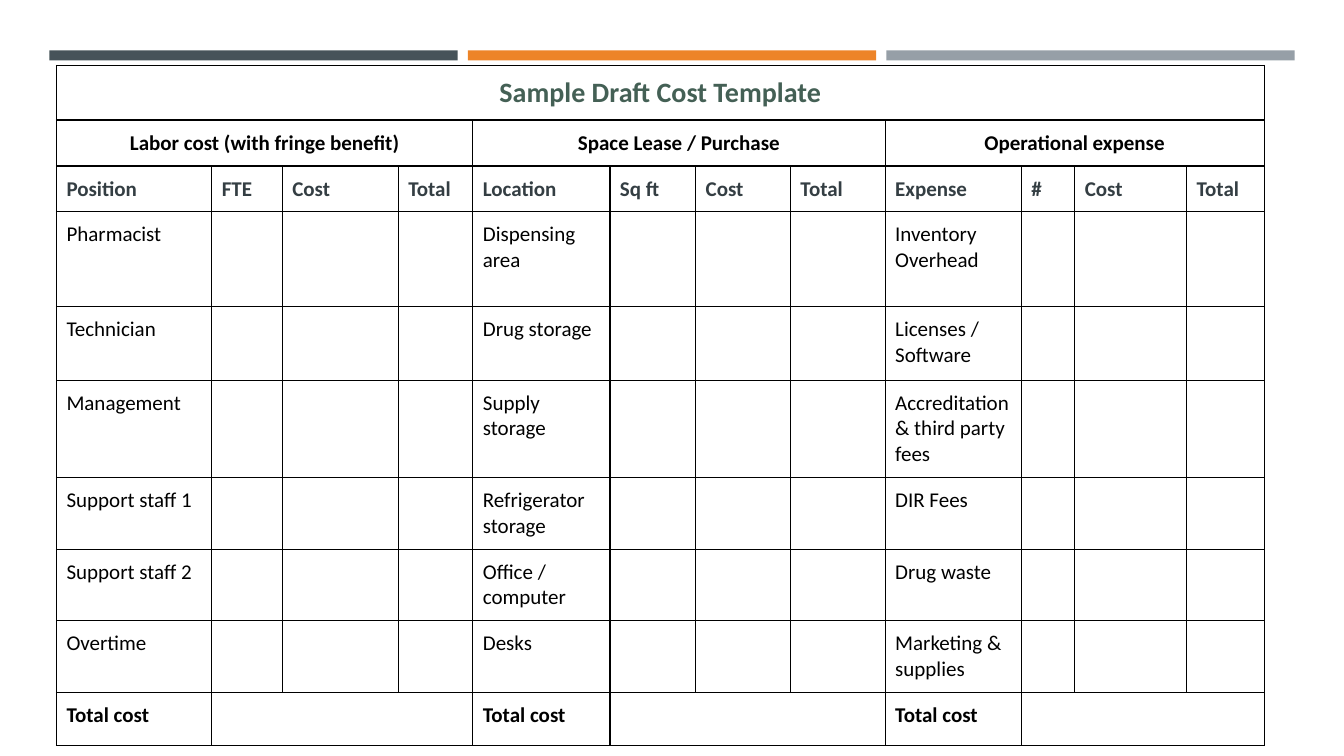
"""Build the sample draft cost template slide."""
from lxml.etree import SubElement
from pptx import Presentation
from pptx.dml.color import RGBColor
from pptx.enum.shapes import MSO_SHAPE
from pptx.enum.text import PP_ALIGN
from pptx.oxml.ns import qn
from pptx.util import Inches, Pt

SLATE = RGBColor(0x46, 0x53, 0x59)
ORANGE = RGBColor(0xED, 0x84, 0x28)
GRAY = RGBColor(0x96, 0x9F, 0xA7)
GREEN = RGBColor(0x44, 0x60, 0x55)
CHARCOAL = RGBColor(0x34, 0x3E, 0x43)
BLACK = RGBColor(0, 0, 0)

TITLE = "Sample Draft Cost Template"
TOTAL_LABEL = "Total cost"
SECTIONS = [
    ("Labor cost (with fringe benefit)", ["Position", "FTE", "Cost", "Total"],
     ["Pharmacist", "Technician", "Management", "Support staff 1",
      "Support staff 2", "Overtime"]),
    ("Space Lease / Purchase", ["Location", "Sq ft", "Cost", "Total"],
     ["Dispensing area", "Drug storage", "Supply storage",
      "Refrigerator storage", "Office / computer", "Desks"]),
    ("Operational expense", ["Expense", "#", "Cost", "Total"],
     ["Inventory Overhead", "Licenses / Software",
      "Accreditation & third party fees", "DIR Fees", "Drug waste",
      "Marketing & supplies"]),
]
COLUMN_WIDTHS = [1.54, 0.7, 1.15, 0.74, 1.36, 0.85, 0.94, 0.94,
                 1.35, 0.53, 1.11, 0.77]
ROW_HEIGHTS = [0.49, 0.41, 0.44, 0.94, 0.73, 0.86, 0.69, 0.69, 0.69, 0.53]
LAST_ROW = len(ROW_HEIGHTS) - 1
SECTION_SPAN = 4
BAR_COLORS = [SLATE, ORANGE, GRAY]
BAR_LEFT, BAR_PITCH, BAR_WIDTH = 0.49, 4.15, 4.05


def add_bars(slide):
    for index, color in enumerate(BAR_COLORS):
        bar = slide.shapes.add_shape(
            MSO_SHAPE.RECTANGLE, Inches(BAR_LEFT + index * BAR_PITCH),
            Inches(0.5), Inches(BAR_WIDTH), Inches(0.1))
        bar.shadow.inherit = False
        bar.fill.solid()
        bar.fill.fore_color.rgb = color
        bar.line.fill.background()


def style_cell(cell):
    cell.margin_left = cell.margin_right = Inches(0.1)
    cell.margin_top = cell.margin_bottom = Inches(0.1)
    properties = cell._tc.get_or_add_tcPr()
    for side in ("a:lnL", "a:lnR", "a:lnT", "a:lnB"):
        border = SubElement(properties, qn(side), w=str(Pt(1)))
        ink = SubElement(border, qn("a:solidFill"))
        SubElement(ink, qn("a:srgbClr"), val=str(BLACK))
    cell.fill.background()


def write(cell, text, color=BLACK, bold=True, size=15, align=PP_ALIGN.LEFT):
    paragraph = cell.text_frame.paragraphs[0]
    paragraph.text = text
    paragraph.alignment = align
    paragraph.font.name = "Calibri"
    paragraph.font.size = Pt(size)
    paragraph.font.bold = bold
    paragraph.font.color.rgb = color


def add_cost_table(slide):
    costs = slide.shapes.add_table(
        len(ROW_HEIGHTS), len(COLUMN_WIDTHS), Inches(0.56), Inches(0.65),
        Inches(sum(COLUMN_WIDTHS)), Inches(sum(ROW_HEIGHTS))).table
    costs.first_row = costs.horz_banding = False
    for column, width in zip(costs.columns, COLUMN_WIDTHS):
        column.width = Inches(width)
    for row, height in zip(costs.rows, ROW_HEIGHTS):
        row.height = Inches(height)
    for cell in costs.iter_cells():
        style_cell(cell)

    costs.cell(0, 0).merge(costs.cell(0, len(COLUMN_WIDTHS) - 1))
    write(costs.cell(0, 0), TITLE, GREEN, size=20, align=PP_ALIGN.CENTER)
    for index, (heading, labels, items) in enumerate(SECTIONS):
        first = index * SECTION_SPAN
        last = first + SECTION_SPAN - 1
        costs.cell(1, first).merge(costs.cell(1, last))
        write(costs.cell(1, first), heading, align=PP_ALIGN.CENTER)
        for offset, label in enumerate(labels):
            write(costs.cell(2, first + offset), label, CHARCOAL)
        for row, item in enumerate(items, start=3):
            write(costs.cell(row, first), item, bold=False)
        write(costs.cell(LAST_ROW, first), TOTAL_LABEL)
        costs.cell(LAST_ROW, first + 1).merge(costs.cell(LAST_ROW, last))


def main():
    deck = Presentation()
    deck.slide_width, deck.slide_height = Inches(13.33), Inches(7.5)
    slide = deck.slides.add_slide(deck.slide_layouts[6])
    add_bars(slide)
    add_cost_table(slide)
    deck.save("out.pptx")


if __name__ == "__main__":
    main()
